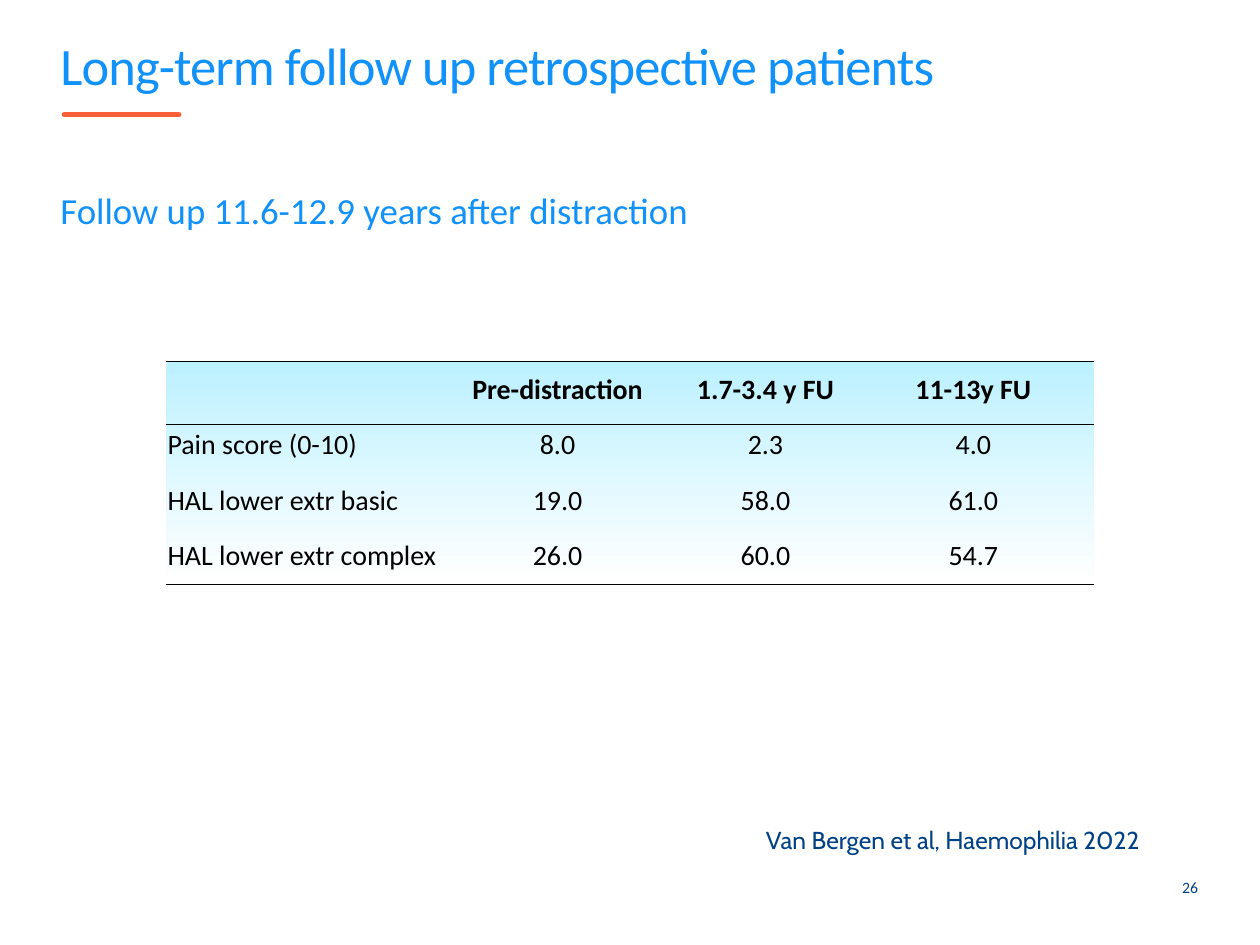
from dataclasses import dataclass

from lxml import etree
from pptx import Presentation
from pptx.dml.color import RGBColor as Rgb
from pptx.enum.shapes import MSO_CONNECTOR as Conn, MSO_SHAPE as Shape
from pptx.enum.text import MSO_ANCHOR as Anchor, MSO_AUTO_SIZE as Auto, PP_ALIGN as Align
from pptx.oxml.ns import qn
from pptx.util import Inches, Pt


@dataclass(frozen=True)
class Theme:
    sky: Rgb = Rgb(0x11, 0x91, 0xFA)
    navy: Rgb = Rgb(0x00, 0x42, 0x85)
    coral: Rgb = Rgb(0xFC, 0x60, 0x39)
    ice: Rgb = Rgb(0xBC, 0xF1, 0xFF)
    white: Rgb = Rgb(0xFF, 0xFF, 0xFF)
    black: Rgb = Rgb(0, 0, 0)
    font: str = "Calibri"
    accent: str = "Cabin"
    title: int = 30
    lead: int = 21
    cell: int = 16
    cite: int = 14
    page: int = 9


THEME = Theme()
LEFT, TOP, WIDTH = 1.32, 2.87, 7.36
ROW = 0.44
COLS = [2.28, 1.65, 1.65, 1.65]
PLAIN = "{2D5ABB26-0587-4C30-8999-92F81FD0307C}"  # table style without fill or grid
ROWS = [
    ["", "Pre-distraction", "1.7-3.4 y FU", "11-13y FU"],
    ["Pain score (0-10)", "8.0", "2.3", "4.0"],
    ["HAL lower extr basic", "19.0", "58.0", "61.0"],
    ["HAL lower extr complex", "26.0", "60.0", "54.7"],
]


def place(shape, left, top, width, height):
    shape.left, shape.top = Inches(left), Inches(top)
    shape.width, shape.height = Inches(width), Inches(height)


def write(frame, text, size, color, font=THEME.font, align=Align.LEFT, bold=False):
    para = frame.paragraphs[0]
    para.alignment = align
    run = para.add_run()
    run.text = text
    run.font.size, run.font.name, run.font.bold = Pt(size), font, bold
    run.font.color.rgb = color
    return run


def trim(frame, anchor=Anchor.TOP):
    """Wrap the text and drop the insets."""
    frame.word_wrap = True
    frame.auto_size = Auto.NONE
    frame.vertical_anchor = anchor
    frame.margin_left = frame.margin_right = 0
    frame.margin_top = frame.margin_bottom = 0


def add_box(slide, *box):
    return slide.shapes.add_textbox(*map(Inches, box)).text_frame


def add_title(slide, text):
    title = slide.shapes.title
    place(title, 0.48, 0.36, 9.03, 0.64)
    frame = title.text_frame
    trim(frame)
    run = write(frame, text, THEME.title, THEME.sky)
    run.font._element.set("spc", "-50")
    frame.paragraphs[0].line_spacing = 0.8


def add_lead(slide, text):
    frame = add_box(slide, 0.48, 1.56, 9.03, 4.78)
    trim(frame)
    write(frame, text, THEME.lead, THEME.sky)
    frame.paragraphs[0].line_spacing = 0.8


def add_rule(slide, left, top, width, color, weight):
    line = slide.shapes.add_connector(
        Conn.STRAIGHT, Inches(left), Inches(top), Inches(left + width), Inches(top))
    line.line.color.rgb = color
    line.line.width = Pt(weight)
    etree.SubElement(line._element.spPr, qn("a:effectLst"))
    return line


def add_panel(slide):
    panel = slide.shapes.add_shape(
        Shape.RECTANGLE, *map(Inches, (LEFT, TOP, WIDTH, ROW * len(ROWS))))
    panel.shadow.inherit = False
    panel.line.fill.background()
    panel.fill.gradient()
    panel.fill.gradient_angle = 270
    for stop, color in zip(panel.fill.gradient_stops, (THEME.ice, THEME.white)):
        stop.color.rgb = color


def fill_cell(cell, text, row, col):
    cell.fill.background()
    cell.vertical_anchor = Anchor.MIDDLE
    cell.margin_left = cell.margin_right = cell.margin_top = Inches(0.01)
    cell.margin_bottom = 0
    if text:
        write(cell.text_frame, text, THEME.cell, THEME.black,
              align=Align.CENTER if col else Align.LEFT, bold=row == 0)


def add_scores(slide):
    frame = slide.shapes.add_table(
        len(ROWS), len(COLS),
        *map(Inches, (LEFT, TOP, sum(COLS), ROW * len(ROWS))))
    table = frame.table
    table.first_row = table.horz_banding = False
    next(frame._element.iter(qn("a:tableStyleId"))).text = PLAIN
    for column, width in zip(table.columns, COLS):
        column.width = Inches(width)
    for r, texts in enumerate(ROWS):
        table.rows[r].height = Inches(ROW)
        for c, text in enumerate(texts):
            fill_cell(table.cell(r, c), text, r, c)


def main():
    deck = Presentation()
    deck.slide_width, deck.slide_height = Inches(10), Inches(7.5)
    slide = deck.slides.add_slide(deck.slide_layouts[5])

    accent = add_rule(slide, 0.51, 0.91, 0.91, THEME.coral, 3)
    accent.line._get_or_add_ln().set("cap", "rnd")
    add_panel(slide)
    add_title(slide, "Long-term follow up retrospective patients")
    add_lead(slide, "Follow up 11.6-12.9 years after distraction")
    add_scores(slide)
    for top in (TOP, 3.37, 4.64):
        add_rule(slide, LEFT, top, WIDTH, THEME.black, 1)

    cite = add_box(slide, 5.98, 6.5, 3.28, 0.34)
    cite.word_wrap = False
    cite.auto_size = Auto.SHAPE_TO_FIT_TEXT
    write(cite, "Van Bergen et al, Haemophilia 2022", THEME.cite, THEME.navy, THEME.accent)

    page = add_box(slide, 9.21, 6.91, 0.3, 0.27)
    trim(page, Anchor.MIDDLE)
    write(page, "26", THEME.page, THEME.navy, align=Align.RIGHT)

    deck.save("out.pptx")


if __name__ == "__main__":
    main()
